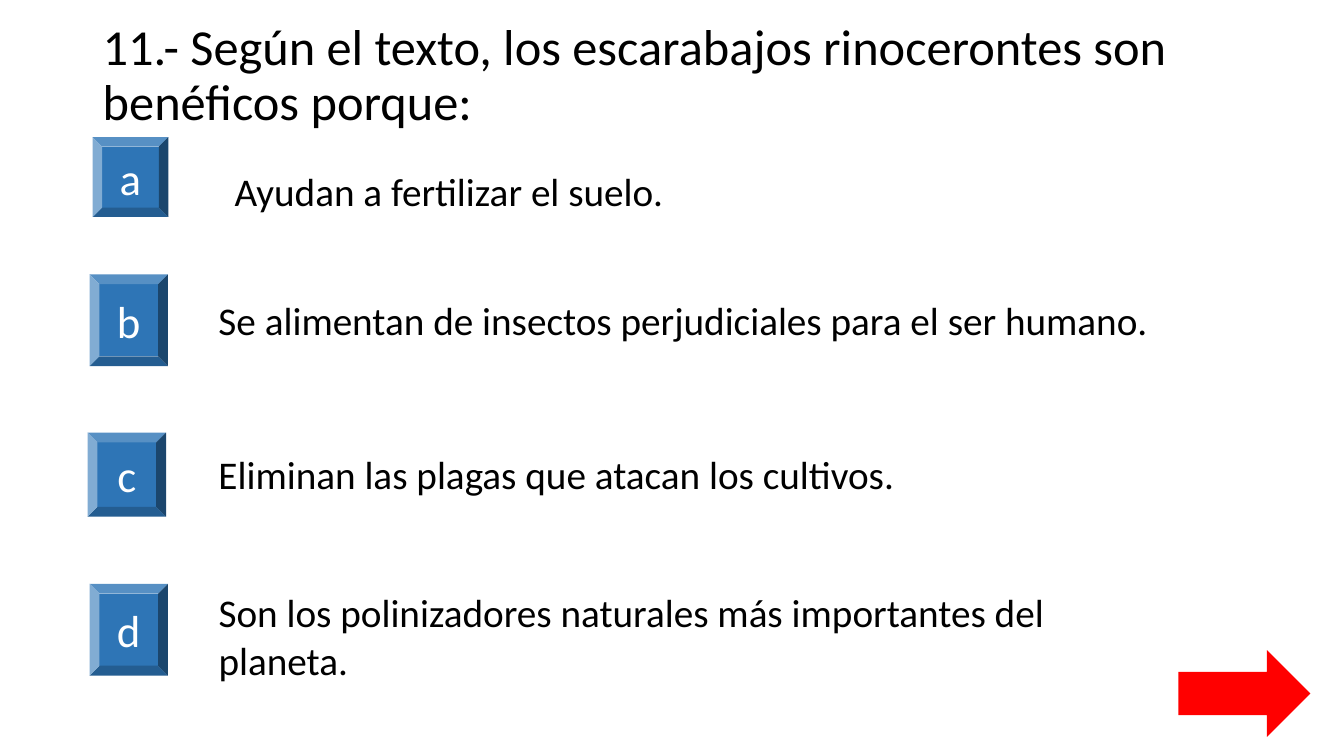
from pptx import Presentation
from pptx import util as u
from pptx.dml.color import RGBColor
from pptx.enum import shapes, text

TITLE = "11.- Según el texto, los escarabajos rinocerontes son benéficos porque:"
OPTIONS = [
    ("a", (66.2, 98, 54, 57), "Ayudan a fertilizar el suelo.", (160.5, 116, 646.5, 41)),
    ("b", (64, 196, 56, 65.5), "Se alimentan de insectos perjudiciales para el ser humano.",
     (149, 208, 725, 41)),
    ("c", (62.6, 309, 56, 60), "Eliminan las plagas que atacan los cultivos.",
     (149, 318, 705.6, 41)),
    ("d", (64, 417, 56, 65.5), "Son los polinizadores naturales más importantes del planeta.",
     (149, 417, 692.6, 75)),
]


def color(value):
    return RGBColor.from_string(value)


def box(values):
    return [u.Pt(v) for v in values]


def write(sp, content, size, ink, frame=None, para=None):
    tf = sp.text_frame
    p = tf.paragraphs[0]
    r = p.add_run()
    r.text = content
    formats = [
        (tf, {"word_wrap": True, **(frame or {})}),
        (p, para or {}),
        (r.font, {"name": "Calibri", "size": u.Pt(size)}),
    ]
    for target, values in formats:
        for name, value in values.items():
            setattr(target, name, value)
    r.font.color.rgb = color(ink)


def add_title(s, content, place):
    sp = s.shapes.title
    for name, value in zip(("left", "top", "width", "height"), box(place)):
        setattr(sp, name, value)
    write(sp, content, 36, "000000",
          {"vertical_anchor": text.MSO_ANCHOR.MIDDLE, "auto_size": text.MSO_AUTO_SIZE.NONE},
          {"alignment": text.PP_ALIGN.LEFT, "line_spacing": 0.9})


def add_solid(s, kind, place, fill):
    sp = s.shapes.add_shape(kind, *box(place))
    sp.shadow.inherit = False
    sp.fill.solid()
    sp.fill.fore_color.rgb = color(fill)
    sp.line.fill.background()
    return sp


def add_button(s, letter, place):
    sp = add_solid(s, shapes.MSO_SHAPE.BEVEL, place, "2E75B6")
    write(sp, letter, 32, "FFFFFF", {"vertical_anchor": text.MSO_ANCHOR.MIDDLE},
          {"alignment": text.PP_ALIGN.CENTER})


def add_answer(s, content, place):
    sp = s.shapes.add_textbox(*box(place))
    write(sp, content, 28, "000000", {"auto_size": text.MSO_AUTO_SIZE.SHAPE_TO_FIT_TEXT})


def main():
    prs = Presentation()
    prs.slide_width, prs.slide_height = u.Pt(960), u.Pt(540)
    s = prs.slides.add_slide(prs.slide_layouts[5])
    add_title(s, TITLE, (66.2, 28.8, 828, 51.8))
    for letter, button_place, answer, answer_place in OPTIONS:
        add_button(s, letter, button_place)
        add_answer(s, answer, answer_place)
    add_solid(s, shapes.MSO_SHAPE.RIGHT_ARROW, (841.7, 464.4, 94.3, 62), "FF0000")
    prs.save("out.pptx")


if __name__ == "__main__":
    main()
